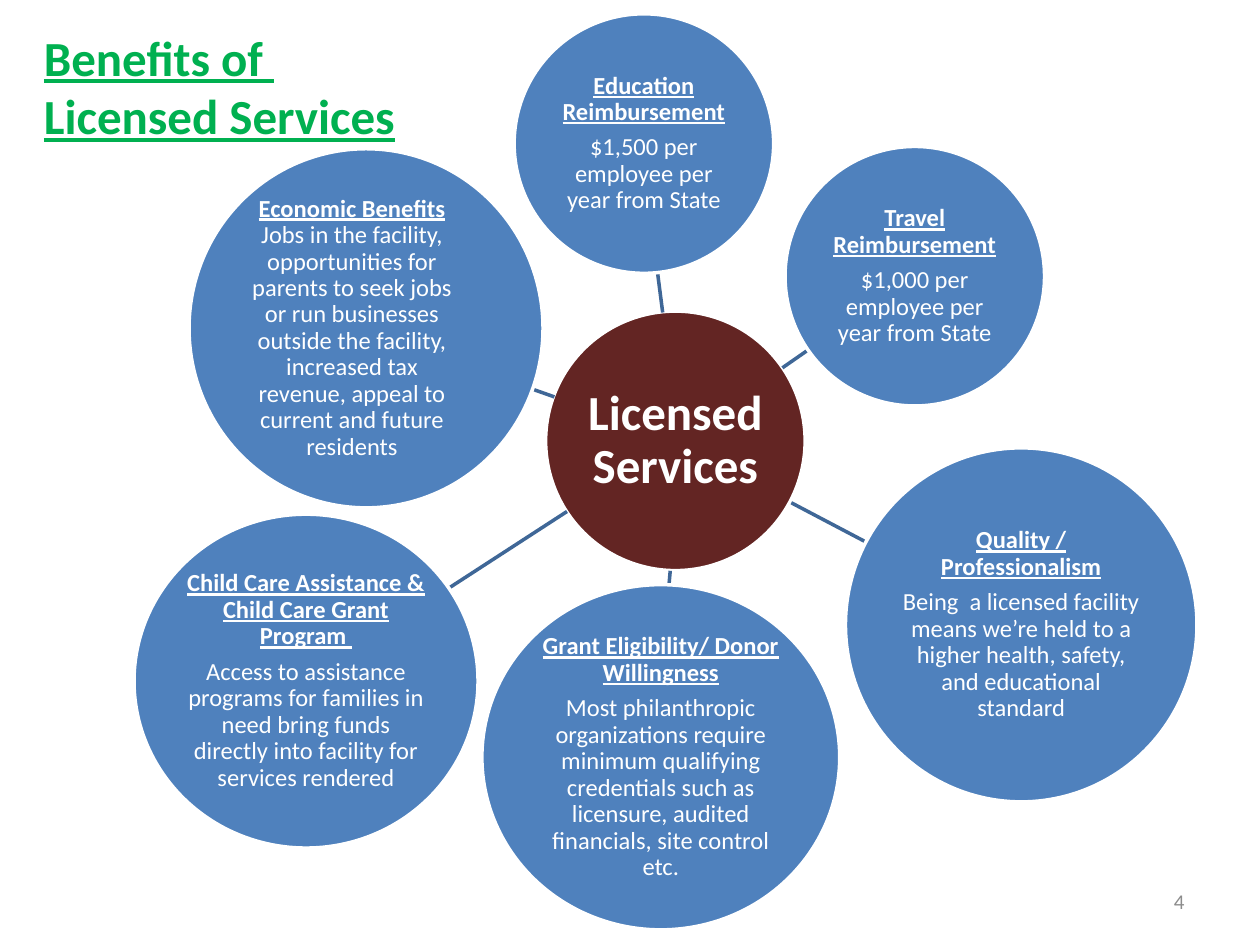
"""Build the slide on the benefits of licensed services."""
from dataclasses import dataclass

from lxml.etree import SubElement
from pptx import Presentation
from pptx.dml.color import RGBColor
from pptx.enum.shapes import MSO_CONNECTOR, MSO_SHAPE
from pptx.enum.text import MSO_ANCHOR, PP_ALIGN
from pptx.oxml.ns import qn
from pptx.slide import Slide
from pptx.text.text import TextFrame
from pptx.util import Pt

FONT = "Calibri"
COLORS = {
    "hub": "632523",
    "benefit": "4F81BD",
    "spoke": "3F6797",
    "title": "00B050",
    "number": "8C8C8C",
    "white": "FFFFFF",
}


@dataclass(frozen=True)
class Line:
    text: str
    size: float = 14
    color: str = "white"
    bold: bool = False
    underline: bool = False
    align: PP_ALIGN = PP_ALIGN.CENTER
    spacing: float = 0.9
    after: float = 5
    right_margin: float = 0


@dataclass(frozen=True)
class Circle:
    box: tuple[float, float, float, float]
    lines: tuple[Line, ...]
    spoke: tuple[float, float, float, float] | None = None
    fill: str = "benefit"
    inset: float = 0.7


def heading(text: str, after: float = 5, right_margin: float = 0) -> Line:
    """Return an underlined bold heading line."""
    return Line(text, bold=True, underline=True, after=after, right_margin=right_margin)


def title_line(text: str) -> Line:
    """Return one line of the slide title."""
    return Line(text, 28, "title", True, True, PP_ALIGN.LEFT, 1, 0)


HUB = Circle((311.8, 177.8, 148.3, 148.3),
             (Line("Licensed Services", 28, bold=True, after=10),), fill="hub", inset=1.4)
BENEFITS = (
    Circle((293.8, 7.9, 148.3, 148.3),
           (heading("Education Reimbursement"),
            Line("$1,500 per employee per year from State")),
           (378.7, 178.6, 375.8, 156.2)),
    Circle((448.6, 83.7, 148.3, 148.3),
           (heading("Travel Reimbursement"),
            Line("$1,000 per employee per year from State")),
           (447.1, 210.2, 461.5, 200.2)),
    Circle((483.1, 255.9, 200.9, 202.3),
           (heading("Quality / Professionalism"),
            Line("Being  a licensed facility means we’re held to a higher health, "
                 "safety, and educational standard")),
           (452.2, 287.3, 494.6, 309.6)),
    Circle((275.4, 334.1, 204.5, 197.3),
           (heading("Grant Eligibility/ Donor Willingness"),
            Line("Most philanthropic organizations require minimum qualifying credentials "
                 "such as licensure, audited financials, site control etc.")),
           (383, 326.2, 382.3, 334.1)),
    Circle((76.6, 293.8, 196.6, 190.8),
           (heading("Child Care Assistance & Child Care Grant Program "),
            Line("Access to assistance programs for families in need bring funds "
                 "directly into facility for services rendered")),
           (324, 292.3, 256.3, 336.2)),
    Circle((108, 85, 202.3, 205.2),
           (heading("Economic Benefits", after=0, right_margin=16),
            Line("Jobs in the facility, opportunities for parents to seek jobs or run "
                 "businesses outside the facility, increased tax revenue, appeal to "
                 "current and future residents")),
           (316.8, 226.8, 304.6, 222.5)),
)


def color(name: str) -> RGBColor:
    """Look up a named colour."""
    return RGBColor.from_string(COLORS[name])


def write_lines(frame: TextFrame, lines: tuple[Line, ...]) -> None:
    """Write each line as a paragraph of one run."""
    frame.word_wrap = True
    for index, line in enumerate(lines):
        paragraph = frame.add_paragraph() if index else frame.paragraphs[0]
        paragraph.alignment = line.align
        paragraph.line_spacing = line.spacing
        paragraph.space_after = Pt(line.after)
        if line.right_margin:
            paragraph._p.get_or_add_pPr().set("marR", str(Pt(line.right_margin)))
        run = paragraph.add_run()
        run.text = line.text
        run.font.name = FONT
        run.font.size = Pt(line.size)
        run.font.bold = line.bold
        run.font.underline = line.underline
        run.font.color.rgb = color(line.color)


def draw_spoke(slide: Slide, ends: tuple[float, float, float, float]) -> None:
    """Draw a straight line from the hub to a benefit."""
    connector = slide.shapes.add_connector(MSO_CONNECTOR.STRAIGHT, *map(Pt, ends))
    connector.line.color.rgb = color("spoke")
    connector.line.width = Pt(2)
    SubElement(connector._element.spPr, qn("a:effectLst"))


def draw_circle(slide: Slide, circle: Circle) -> None:
    """Draw a circle with its spoke and text."""
    if circle.spoke:
        draw_spoke(slide, circle.spoke)
    shape = slide.shapes.add_shape(MSO_SHAPE.OVAL, *map(Pt, circle.box))
    shape.shadow.inherit = False
    shape.fill.solid()
    shape.fill.fore_color.rgb = color(circle.fill)
    shape.line.color.rgb = color("white")
    shape.line.width = Pt(2)
    frame = shape.text_frame
    frame.margin_left = frame.margin_right = Pt(circle.inset)
    frame.margin_top = frame.margin_bottom = Pt(circle.inset)
    frame.vertical_anchor = MSO_ANCHOR.MIDDLE
    write_lines(frame, circle.lines)


def draw_text(slide: Slide, box: tuple[float, float, float, float],
              lines: tuple[Line, ...], anchor: MSO_ANCHOR) -> None:
    """Draw a free text box."""
    frame = slide.shapes.add_textbox(*map(Pt, box)).text_frame
    frame.vertical_anchor = anchor
    write_lines(frame, lines)


def main() -> None:
    """Build and save the presentation."""
    presentation = Presentation()
    presentation.slide_width, presentation.slide_height = Pt(720), Pt(540)
    slide = presentation.slides.add_slide(presentation.slide_layouts[6])
    for circle in (HUB, *BENEFITS):
        draw_circle(slide, circle)
    draw_text(slide, (18, 12, 660, 75),
              (title_line("Benefits of "), title_line("Licensed Services")), MSO_ANCHOR.TOP)
    number = Line("4", 12, "number", align=PP_ALIGN.RIGHT, spacing=1, after=0)
    draw_text(slide, (516, 500.5, 168, 28.75), (number,), MSO_ANCHOR.MIDDLE)
    presentation.save("out.pptx")


if __name__ == "__main__":
    main()
